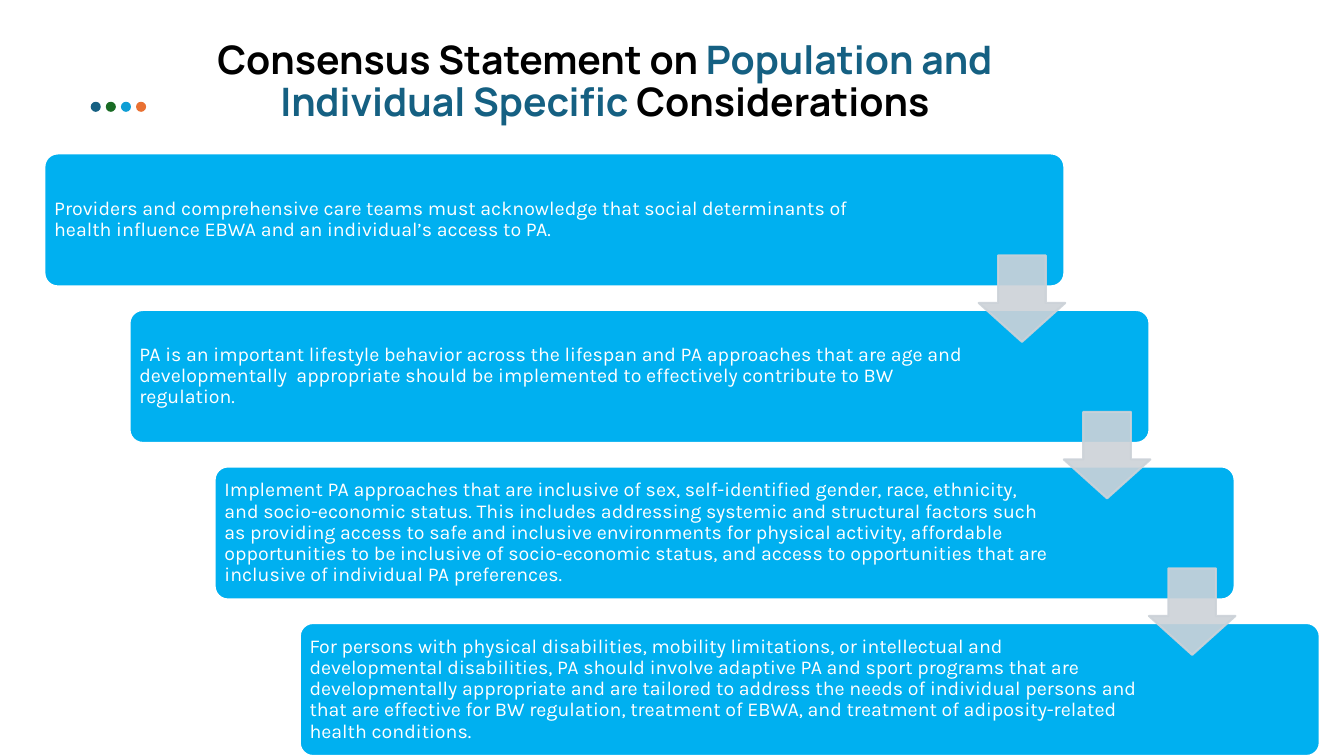
from lxml.etree import SubElement
from pptx import Presentation
from pptx.dml.color import RGBColor
from pptx.enum.shapes import MSO_SHAPE as Preset
from pptx.enum.text import MSO_ANCHOR as Anchor, MSO_AUTO_SIZE as AutoSize, PP_ALIGN as Align
from pptx.oxml.ns import qn
from pptx.util import Pt

COLORS = {
    "black": "000000",
    "white": "FFFFFF",
    "teal": "156082",
    "green": "196B24",
    "blue": "0F9ED5",
    "orange": "E97132",
    "step": "00B0F0",
    "arrow": "CCD2D8",
}

STEPS = [
    ("Providers and comprehensive care teams must acknowledge that social determinants of "
     "health influence EBWA and an individual’s access to PA.", 618.5),
    ("PA is an important lifestyle behavior across the lifespan and PA approaches that are age and "
     "developmentally  appropriate should be implemented to effectively contribute to BW "
     "regulation.", 600.5),
    ("Implement PA approaches that are inclusive of sex, self-identified gender, race, ethnicity, "
     "and socio-economic status. This includes addressing systemic and structural factors such "
     "as providing access to safe and inclusive environments for physical activity, affordable "
     "opportunities to be inclusive of socio-economic status, and access to opportunities that are "
     "inclusive of individual PA preferences.", 602),
    ("For persons with physical disabilities, mobility limitations, or intellectual and "
     "developmental disabilities, PA should involve adaptive PA and sport programs that are "
     "developmentally appropriate and are tailored to address the needs of individual persons and "
     "that are effective for BW regulation, treatment of EBWA, and treatment of adiposity-related "
     "health conditions.", 600.5),
]


def color(name):
    return RGBColor.from_string(COLORS[name])


def write_text(frame, runs, *, font, size, bold=False, align=Align.LEFT,
               anchor=Anchor.TOP, insets=(7.2, 3.6), space_after=0):
    frame.word_wrap = True
    frame.vertical_anchor = anchor
    frame.margin_left = frame.margin_right = Pt(insets[0])
    frame.margin_top = frame.margin_bottom = Pt(insets[1])
    paragraph = frame.paragraphs[0]
    paragraph.alignment = align
    paragraph.line_spacing = 0.9
    paragraph.space_before = Pt(0)
    paragraph.space_after = Pt(space_after)
    for text, color_name in runs:
        run = paragraph.add_run()
        run.text = text
        run.font.name = font
        run.font.size = Pt(size)
        run.font.bold = bold
        run.font.color.rgb = color(color_name)


def add_preset(slide, preset, box, fill, line=None, adjustments=(), opacity=None):
    shape = slide.shapes.add_shape(preset, *map(Pt, box))
    shape.shadow.inherit = False
    for index, value in enumerate(adjustments):
        shape.adjustments[index] = value
    shape.fill.solid()
    shape.fill.fore_color.rgb = color(fill)
    if line:
        shape.line.color.rgb = color(line)
        shape.line.width = Pt(1.5)
    else:
        shape.line.fill.background()
    if opacity is not None:
        for element in shape.element.spPr.iter(qn("a:srgbClr")):
            SubElement(element, qn("a:alpha"), val=str(opacity * 1000))
    return shape


def add_dots(slide, left, top, size):
    for index, name in enumerate(("teal", "green", "blue", "orange")):
        add_preset(slide, Preset.OVAL, (left + index * size * 1.5, top, size, size), name)


def add_title(slide, left, top, width, height):
    title = slide.shapes.title
    title.left, title.top, title.width, title.height = map(Pt, (left, top, width, height))
    write_text(title.text_frame, [
        ("Consensus Statement on ", "black"),
        ("Population and Individual Specific ", "teal"),
        ("Considerations", "black"),
    ], font="Manrope", size=28, bold=True, align=Align.CENTER)
    title.text_frame.auto_size = AutoSize.SHAPE_TO_FIT_TEXT


def add_step(slide, left, top, width, height, text, text_width):
    add_preset(slide, Preset.ROUNDED_RECTANGLE, (left, top, width, height),
               "step", "white", [0.1])
    inset = 2.8
    text_box = slide.shapes.add_textbox(Pt(left + inset), Pt(top + inset),
                                        Pt(text_width), Pt(height - 2 * inset))
    write_text(text_box.text_frame, [(text, "white")], font="Karla", size=14,
               anchor=Anchor.MIDDLE, insets=(4.2, 4.2), space_after=4.9)


def add_staircase(slide, left, top, width, height):
    step_width, step_height, arrow_size = 728.6, 95, 61.8
    gaps = len(STEPS) - 1
    shift = (width - step_width) / gaps
    drop = (height - step_height) / gaps
    corners = [(left + index * shift, top + index * drop) for index in range(len(STEPS))]
    for (x, y), (text, text_width) in zip(corners, STEPS):
        add_step(slide, x, y, step_width, step_height, text, text_width)
    for x, y in corners[:-1]:
        add_preset(slide, Preset.DOWN_ARROW, (x + 667.4, y + 72.8, arrow_size, arrow_size),
                   "arrow", "arrow", [0.55, 0.45], opacity=90)


def main():
    presentation = Presentation()
    presentation.slide_width, presentation.slide_height = Pt(960), Pt(540)
    slide = presentation.slides.add_slide(presentation.slide_layouts[5])
    slide.background.fill.solid()
    slide.background.fill.fore_color.rgb = color("white")
    add_dots(slide, 64.8, 72.7, 7.2)
    add_title(slide, 113, 25.2, 638, 103)
    add_staircase(slide, 31.7, 109.6, 911, 430.4)
    presentation.save("out.pptx")


if __name__ == "__main__":
    main()
